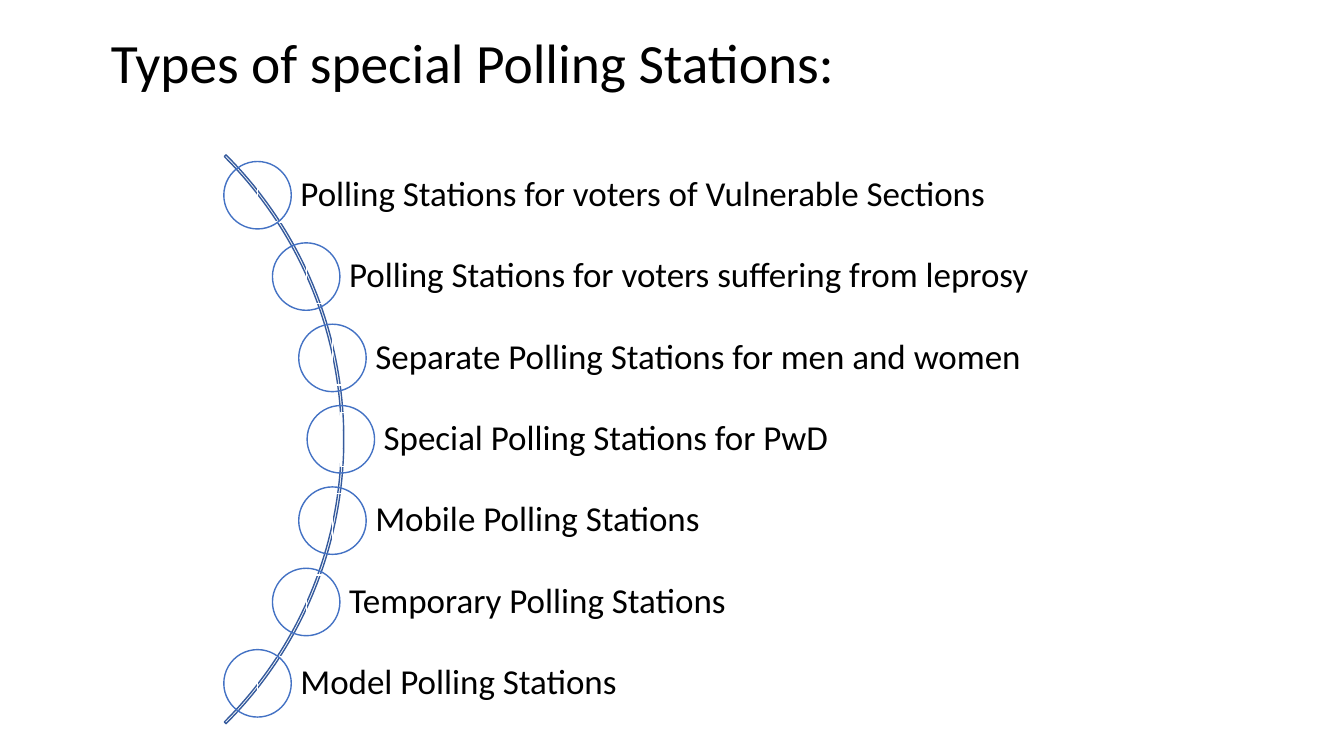
from dataclasses import dataclass
from math import sqrt

from pptx import Presentation
from pptx.dml.color import RGBColor
from pptx.enum import shapes, text
from pptx.util import Cm, Pt


@dataclass(frozen=True)
class Theme:
    font: str = "Calibri"
    ink: RGBColor = RGBColor(0x00, 0x00, 0x00)
    arc: RGBColor = RGBColor(0x36, 0x5B, 0x9D)
    circle: RGBColor = RGBColor(0x44, 0x72, 0xC4)
    row: RGBColor = RGBColor(0xFF, 0xFF, 0xFF)
    title_size: float = 39.6
    row_size: float = 25
    line_width: float = 1


@dataclass(frozen=True)
class Station:
    label: str
    center_x: float
    center_y: float


THEME = Theme()

# Geometry in centimetres
ARC_X, ARC_Y, ARC_SIZE = -1.47, 11.07, 20.27
CENTER_RADIUS = 10.06
ROW_PITCH, ROW_HEIGHT, ROW_RIGHT = 2.05, 1.36, 27.78
CIRCLE_SIZE = 1.7

LABELS = (
    "Polling Stations for voters of Vulnerable Sections",
    "Polling Stations for voters suffering from leprosy",
    "Separate Polling Stations for men and women",
    "Special Polling Stations for PwD",
    "Mobile Polling Stations",
    "Temporary Polling Stations",
    "Model Polling Stations",
)


def place_stations() -> list[Station]:
    """Space the stations evenly in height along the arc."""
    middle = (len(LABELS) - 1) / 2
    stations = []
    for index, label in enumerate(LABELS):
        offset = (index - middle) * ROW_PITCH
        x = ARC_X + sqrt(CENTER_RADIUS**2 - offset**2)
        stations.append(Station(label, x, ARC_Y + offset))
    return stations


def add_outline(group, kind, left: float, top: float, width: float,
                height: float, color: RGBColor):
    shape = group.shapes.add_shape(kind, Cm(left), Cm(top), Cm(width), Cm(height))
    shape.shadow.inherit = False
    shape.fill.background()
    shape.line.color.rgb = color
    shape.line.width = Pt(THEME.line_width)
    return shape


def write_line(frame, wording: str, size: float) -> None:
    frame.word_wrap = True
    frame.vertical_anchor = text.MSO_ANCHOR.MIDDLE
    paragraph = frame.paragraphs[0]
    paragraph.alignment = text.PP_ALIGN.LEFT
    paragraph.line_spacing = 0.9
    run = paragraph.add_run()
    run.text = wording
    run.font.name = THEME.font
    run.font.size = Pt(size)
    run.font.color.rgb = THEME.ink


def add_station(group, station: Station) -> None:
    # Label row
    row = add_outline(group, shapes.MSO_SHAPE.RECTANGLE, station.center_x,
                      station.center_y - ROW_HEIGHT / 2,
                      ROW_RIGHT - station.center_x, ROW_HEIGHT, THEME.row)
    frame = row.text_frame
    frame.margin_left = Cm(1.08)
    frame.margin_top = frame.margin_right = frame.margin_bottom = Cm(0.18)
    write_line(frame, station.label, THEME.row_size)
    # Circle over the row's left edge
    add_outline(group, shapes.MSO_SHAPE.OVAL, station.center_x - CIRCLE_SIZE / 2,
                station.center_y - CIRCLE_SIZE / 2, CIRCLE_SIZE, CIRCLE_SIZE,
                THEME.circle)


def main() -> None:
    presentation = Presentation()
    presentation.slide_width, presentation.slide_height = Cm(33.87), Cm(19.05)
    slide = presentation.slides.add_slide(presentation.slide_layouts.get_by_name("Title Only"))

    # Title
    title = slide.shapes.title
    title.left, title.top, title.width, title.height = Cm(2.54), Cm(0.74), Cm(28.78), Cm(1.83)
    write_line(title.text_frame, "Types of special Polling Stations:", THEME.title_size)
    title.text_frame.auto_size = text.MSO_AUTO_SIZE.NONE

    # Curved list: thin arc, then the stations along it
    group = slide.shapes.add_group_shape()
    arc = add_outline(group, shapes.MSO_SHAPE.BLOCK_ARC, ARC_X - ARC_SIZE / 2,
                      ARC_Y - ARC_SIZE / 2, ARC_SIZE, ARC_SIZE, THEME.arc)
    for index, value in enumerate((189, 27, 0.003)):
        arc.adjustments[index] = value
    for station in place_stations():
        add_station(group, station)

    presentation.save("out.pptx")


if __name__ == "__main__":
    main()
